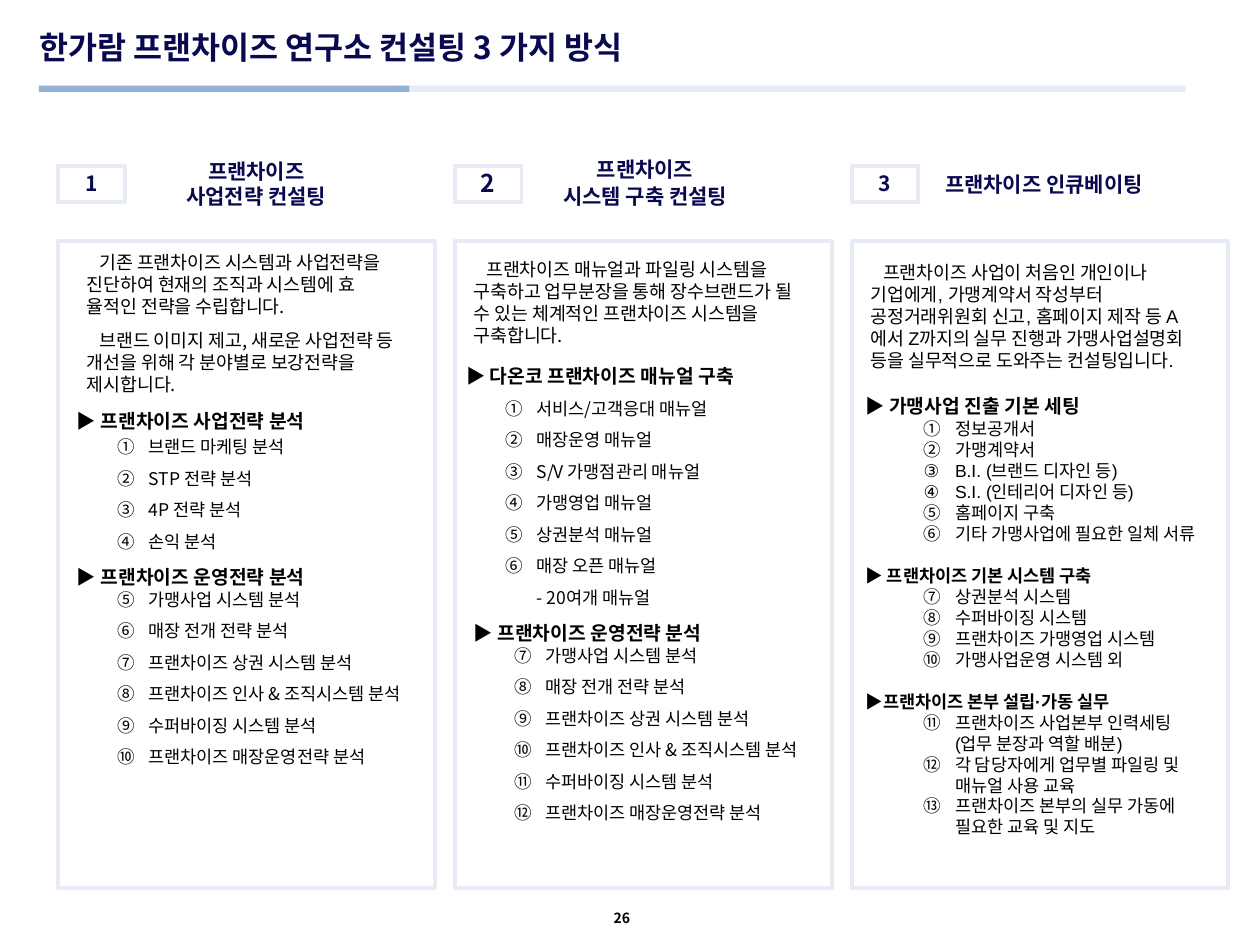
"""Build a slide that sets out three ways of franchise consulting."""
from lxml import etree
from pptx import Presentation
from pptx import util as u
from pptx.dml.color import RGBColor
from pptx.enum import shapes, text
from pptx.oxml.ns import qn

NOTO, NAVY, PALE, BLACK = "Noto Sans CJK KR", "090950", "E6EBF6", "000000"
LEFT, MID = text.PP_ALIGN.LEFT, text.PP_ALIGN.CENTER

deck = Presentation()
deck.slide_width, deck.slide_height = u.Inches(10), u.Inches(7.5)
slide = deck.slides.add_slide(deck.slide_layouts[6])


def box(x, y, w, h, top=0.01, fill=None, line=None, plain=False):
    spot = [u.Inches(v) for v in (x, y, w, h)]
    if plain:
        shape = slide.shapes.add_textbox(*spot)
    else:
        shape = slide.shapes.add_shape(shapes.MSO_SHAPE.RECTANGLE, *spot)
        shape.shadow.inherit = False
        for part, tint in ((shape.fill, fill), (shape.line.fill, line)):
            if tint:
                part.solid()
                part.fore_color.rgb = RGBColor.from_string(tint)
            else:
                part.background()
        if line:
            shape.line.width = u.Pt(2.28)
    frame = shape.text_frame
    frame.word_wrap = True
    frame.vertical_anchor = text.MSO_ANCHOR.TOP
    frame.margin_left = frame.margin_right = frame.margin_bottom = 0
    frame.margin_top = u.Inches(top)
    return frame


def write(frame, words, size, tint=BLACK, bold=True, align=LEFT, face=NOTO,
          left=0, hang=0, gap=0, start=0):
    para = frame.paragraphs[0]
    if para.text:
        para = frame.add_paragraph()
    para.text = words
    para.alignment = align
    para.space_before = u.Pt(gap)
    para.line_spacing = u.Pt(round(size * 1.2, 1))
    props = para._p.get_or_add_pPr()
    props.set("marL", str(u.Inches(left)))
    props.set("indent", str(u.Inches(hang)))
    if start:
        etree.SubElement(props, qn("a:buAutoNum"), type="circleNumDbPlain",
                         startAt=str(start))
    font = para.font
    font.size, font.bold, font.name = u.Pt(size), bold, face
    font.color.rgb = RGBColor.from_string(tint)
    etree.SubElement(props.find(qn("a:defRPr")), qn("a:ea"), typeface=NOTO)


write(box(0.31, 0.21, 5.48, 0.32, plain=True),
      "한가람 프랜차이즈 연구소 컨설팅 3 가지 방식", 18, NAVY)
box(3.11, 0.68, 6.3, 0.05, fill=PALE)
box(0.31, 0.68, 2.94, 0.05, fill="93B3D5")

heads = [
    (1.23, 1.25, 1.61, 0.42, MID, 0, ["프랜차이즈", "사업전략 컨설팅"]),
    (4.38, 1.23, 1.48, 0.43, MID, 1, ["프랜차이즈", "시스템 구축 컨설팅"]),
    (7.5, 1.35, 2.22, 0.22, LEFT, 0, ["프랜차이즈 인큐베이팅"]),
]
badges = [(12, 0.03), (14, 0.01), (12, 0.03)]

run = ["가맹사업 시스템 분석", "매장 전개 전략 분석", "프랜차이즈 상권 시스템 분석",
       "프랜차이즈 인사 & 조직시스템 분석", "수퍼바이징 시스템 분석",
       "프랜차이즈 매장운영전략 분석"]

intro = dict(size=10.5, bold=False, hang=0.1)
title = dict(size=11)
item = dict(size=10, bold=False, hang=-0.25)
cols = [
    (0.08, NOTO, [
        (intro, 0.23, 0, 7, 0, [
            "기존 프랜차이즈 시스템과 사업전략을\v진단하여 현재의 조직과 시스템에 효\v율적인 전략을 수립합니다.",
            "브랜드 이미지 제고, 새로운 사업전략 등\v개선을 위해 각 분야별로 보강전략을\v제시합니다."]),
        (title, 0.15, 8, 0, 0, ["▶ 프랜차이즈 사업전략 분석"]),
        (item, 0.72, 2.1, 6, 1,
         ["브랜드 마케팅 분석", "STP 전략 분석", "4P 전략 분석", "손익 분석"]),
        (title, 0.15, 7.8, 0, 0, ["▶ 프랜차이즈 운영전략 분석"]),
        (item, 0.72, 0.1, 6, 5, run),
    ]),
    (0.14, NOTO, [
        (intro, 0.15, 0, 0, 0, [
            "프랜차이즈 매뉴얼과 파일링 시스템을\v구축하고 업무분장을 통해 장수브랜드가 될\v"
            "수 있는 체계적인 프랜차이즈 시스템을\v구축합니다."]),
        (title, 0.09, 10.2, 0, 0, ["▶ 다온코 프랜차이즈 매뉴얼 구축"]),
        (item, 0.65, 6, 6, 1,
         ["서비스/고객응대 매뉴얼", "매장운영 매뉴얼", "S/V 가맹점관리 매뉴얼",
          "가맹영업 매뉴얼", "상권분석 매뉴얼", "매장 오픈 매뉴얼"]),
        (dict(size=10, bold=False), 0.65, 6, 0, 0, ["- 20여개 매뉴얼"]),
        (title, 0.15, 7.8, 0, 0, ["▶ 프랜차이즈 운영전략 분석"]),
        (item, 0.72, 0.1, 6, 7, run),
    ]),
    (0.16, "Arial", [
        (intro, 0.15, 0, 0, 0, [
            "프랜차이즈 사업이 처음인 개인이나\v기업에게, 가맹계약서 작성부터\v"
            "공정거래위원회 신고, 홈페이지 제작 등 A\v에서 Z까지의 실무 진행과 가맹사업설명회\v"
            "등을 실무적으로 도와주는 컨설팅입니다."]),
        (title, 0.11, 13.5, 0, 0, ["▶ 가맹사업 진출 기본 세팅"]),
        (item, 0.82, 0, 0, 1,
         ["정보공개서", "가맹계약서", "B.I. (브랜드 디자인 등)",
          "S.I. (인테리어 디자인 등)", "홈페이지 구축", "기타 가맹사업에 필요한 일체 서류"]),
        (dict(size=10), 0.11, 12, 0, 0, ["▶ 프랜차이즈 기본 시스템 구축"]),
        (item, 0.82, 0, 0, 7,
         ["상권분석 시스템", "수퍼바이징 시스템", "프랜차이즈 가맹영업 시스템",
          "가맹사업운영 시스템 외"]),
        (dict(size=10), 0.11, 12, 0, 0, ["▶프랜차이즈 본부 설립·가동 실무"]),
        (item, 0.82, 0, 0, 11,
         ["프랜차이즈 사업본부 인력세팅\v(업무 분장과 역할 배분)",
          "각 담당자에게 업무별 파일링 및\v매뉴얼 사용 교육",
          "프랜차이즈 본부의 실무 가동에\v필요한 교육 및 지도"]),
    ]),
]

for n, (head, badge, col) in enumerate(zip(heads, badges, cols)):
    x = 0.46 + 3.15 * n
    *spot, align, gap, lines = head
    frame = box(*spot, plain=True)
    for line in lines:
        write(frame, line, 12, NAVY, align=align, gap=gap)

    size, top = badge
    write(box(x, 1.32, 0.53, 0.28, top, line=PALE), str(n + 1), size, NAVY,
          align=MID)

    top, face, blocks = col
    frame = box(x, 1.91, 2.99, 5.14, top, line=PALE)
    for style, left, first, rest, start, lines in blocks:
        for i, line in enumerate(lines):
            write(frame, line, face=face, left=left, gap=rest if i else first,
                  start=start, **style)

write(box(4.83, 7.21, 0.35, 0.14, plain=True), "26", 8, left=0.04)

deck.save("out.pptx")
